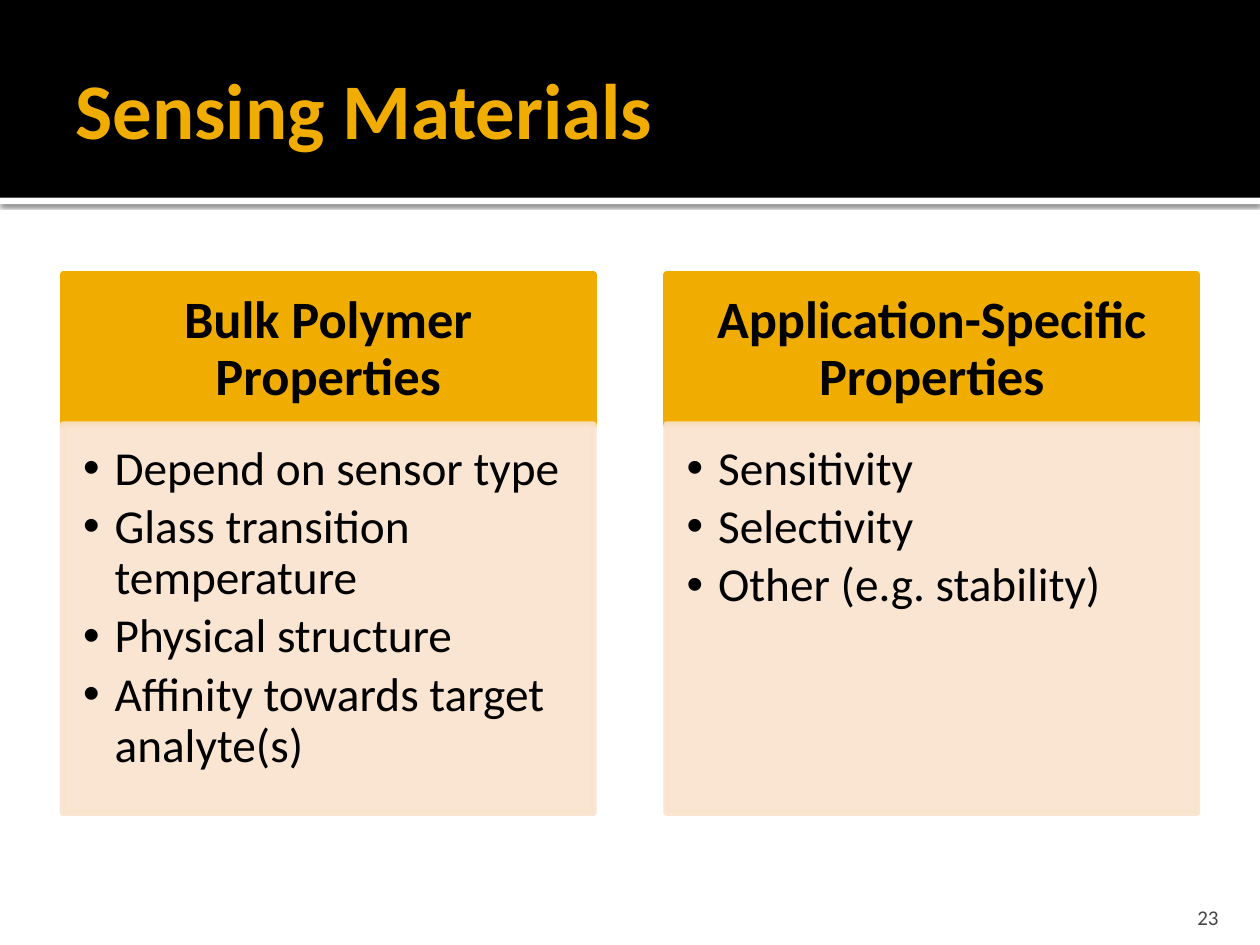
from lxml import etree
from pptx import Presentation
from pptx.dml.color import RGBColor
from pptx.enum.shapes import MSO_SHAPE
from pptx.enum.text import MSO_ANCHOR, PP_ALIGN
from pptx.oxml import parse_xml
from pptx.oxml.ns import nsdecls, qn
from pptx.util import Inches, Pt

RECTANGLE = MSO_SHAPE.RECTANGLE
TOP, MIDDLE, BOTTOM = MSO_ANCHOR.TOP, MSO_ANCHOR.MIDDLE, MSO_ANCHOR.BOTTOM
LEFT, CENTER, RIGHT = PP_ALIGN.LEFT, PP_ALIGN.CENTER, PP_ALIGN.RIGHT
GOLD, CREAM, BLACK, WHITE, GRAY = "F0AD00", "F9E3CC", "000000", "FFFFFF", "454545"


def color(value):
    return RGBColor.from_string(value)


def write(shape, lines, size, text_color, anchor, alignment, insets, bold=False, spacing=1, after=0, bullets=False):
    frame = shape.text_frame
    frame.word_wrap = True
    frame.vertical_anchor = anchor
    frame.margin_left, frame.margin_top, frame.margin_right, frame.margin_bottom = map(Inches, insets)
    frame.text = "\n".join(lines)
    for paragraph in frame.paragraphs:
        paragraph.alignment = alignment
        paragraph.line_spacing = spacing
        paragraph.space_after = Pt(after)
        if bullets:
            properties = paragraph._p.get_or_add_pPr()
            properties.set("marL", str(Inches(0.25)))
            properties.set("indent", str(-Inches(0.25)))
            etree.SubElement(properties, qn("a:buFont"), typeface="Arial")
            etree.SubElement(properties, qn("a:buChar"), char="•")
        paragraph.font.name = "Calibri"
        paragraph.font.size = Pt(size)
        paragraph.font.bold = bold
        paragraph.font.color.rgb = color(text_color)


presentation = Presentation()
presentation.slide_width = Inches(10)
presentation.slide_height = Inches(7.5)
slide = presentation.slides.add_slide(presentation.slide_layouts[6])
shapes = slide.shapes

for top, height, fill in [(1.57, 0.05, WHITE), (0, 1.57, BLACK)]:
    band = shapes.add_shape(RECTANGLE, 0, Inches(top), Inches(10), Inches(height))
    band.shadow.inherit = False
    band.fill.solid()
    band.fill.fore_color.rgb = color(fill)
    band.line.fill.background()
    if fill == WHITE:
        effects = band._element.spPr.find(qn("a:effectLst"))
        effects.append(parse_xml(
            f'<a:outerShdw {nsdecls("a")} blurRad="{Pt(2.5)}" dist="{Pt(0.8)}" dir="5400000" algn="tl" rotWithShape="0">'
            '<a:srgbClr val="000000"><a:alpha val="60000"/></a:srgbClr></a:outerShdw>'))

title = shapes.add_textbox(Inches(0.5), Inches(0.17), Inches(9), Inches(1.37))
write(title, ["Sensing Materials"], 45, GOLD, MIDDLE, LEFT, (0.1, 0.05, 0.05, 0.05), bold=True)

slide_number = shapes.add_textbox(Inches(8.97), Inches(7.08), Inches(0.8), Inches(0.3))
write(slide_number, ["23"], 12, GRAY, BOTTOM, RIGHT, (0.1, 0.05, 0.1, 0))

columns = [
    ("Bulk Polymer Properties",
     ["Depend on sensor type", "Glass transition temperature", "Physical structure",
      "Affinity towards target analyte(s)"]),
    ("Application-Specific Properties",
     ["Sensitivity", "Selectivity", "Other (e.g. stability)"]),
]
for index, (heading, items) in enumerate(columns):
    left = Inches(0.5 + 4.79 * index)
    header = shapes.add_shape(RECTANGLE, left, Inches(2.18), Inches(4.21), Inches(1.19))
    body = shapes.add_shape(RECTANGLE, left, Inches(3.37), Inches(4.21), Inches(3.08))
    for box, fill in [(header, GOLD), (body, CREAM)]:
        box.shadow.inherit = False
        box.fill.solid()
        box.fill.fore_color.rgb = color(fill)
        box.line.color.rgb = color(fill)
        box.line.width = Pt(3.78)
    for tint in body._element.spPr.iter(qn("a:srgbClr")):
        etree.SubElement(tint, qn("a:alpha"), val="90000")
    write(header, [heading], 30, BLACK, MIDDLE, CENTER, (0.23, 0.13, 0.23, 0.13), bold=True, spacing=0.9)
    write(body, items, 27, BLACK, TOP, LEFT, (0.16, 0.16, 0.21, 0.24), spacing=0.9, after=4, bullets=True)

presentation.save("out.pptx")
